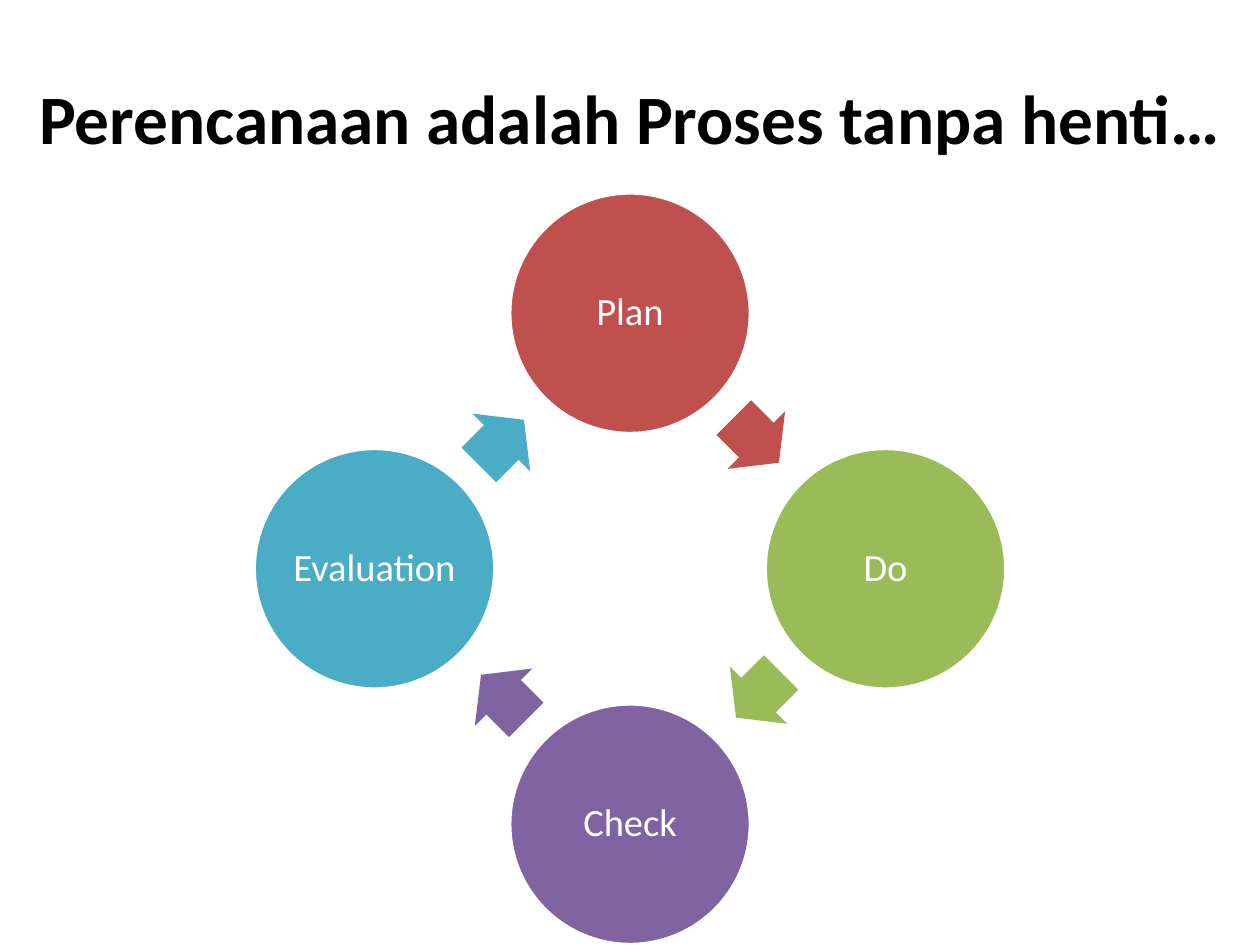
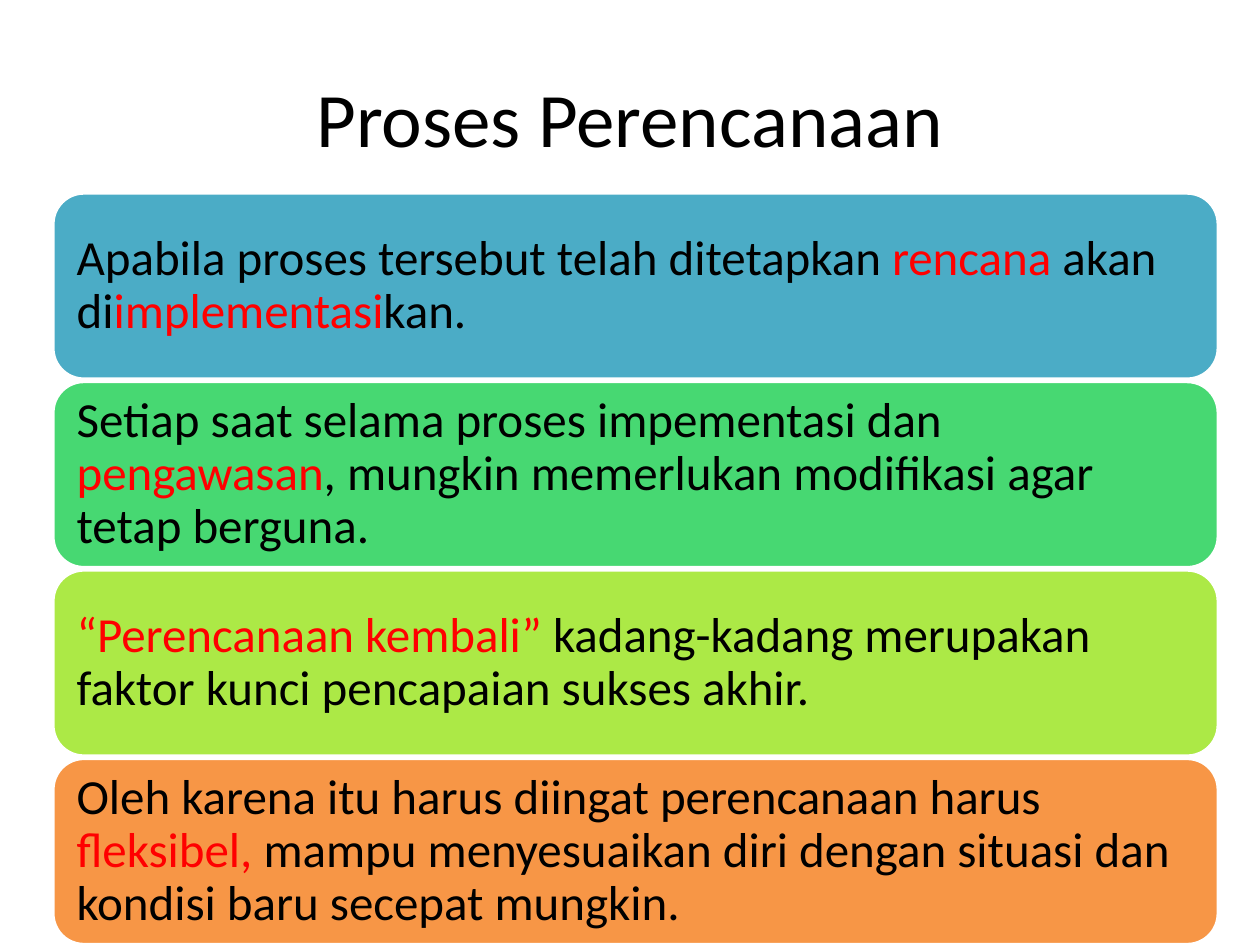
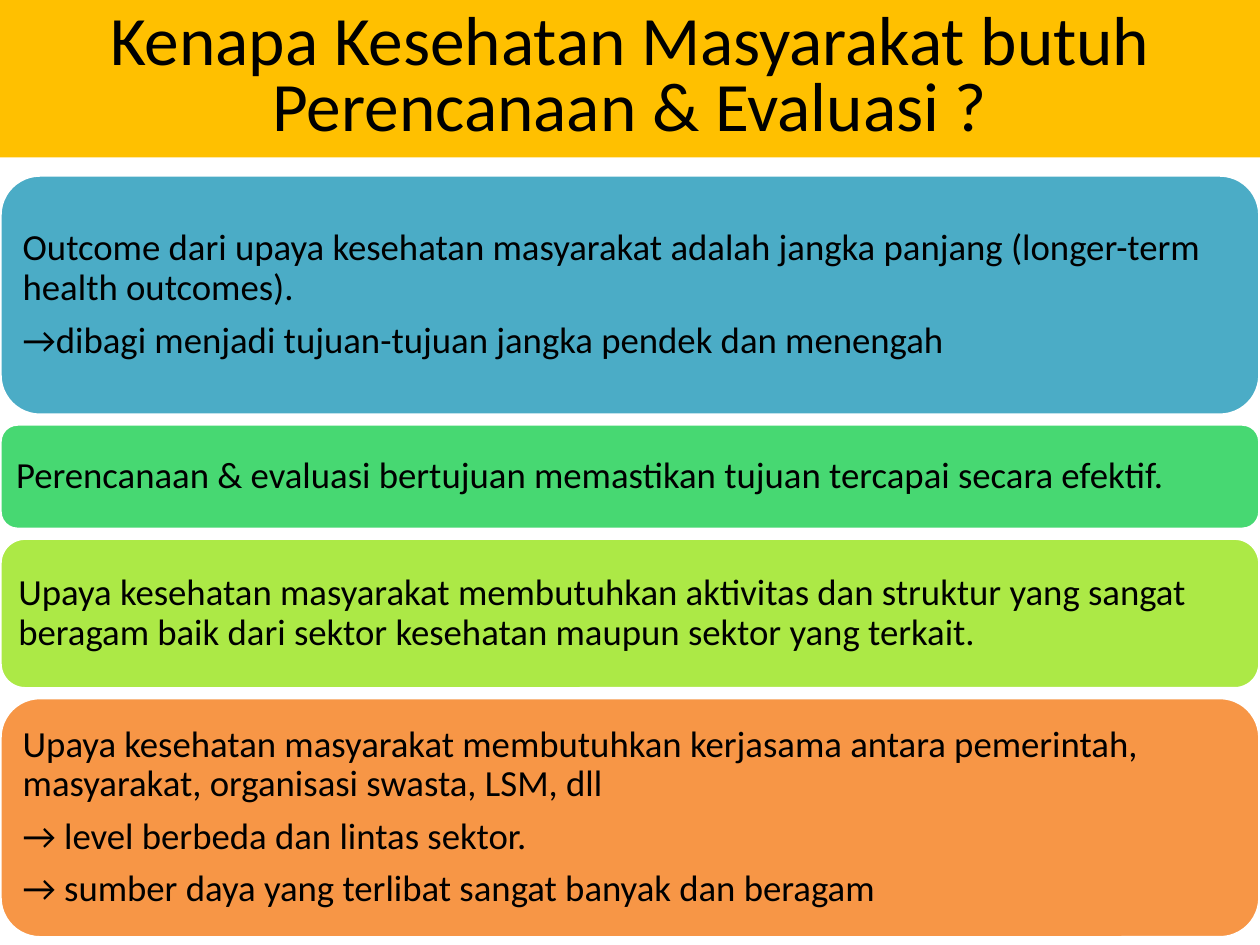
"""Build three slides on planning as a cycle, a process and a need."""
from dataclasses import dataclass
from math import cos, radians, sin

from pptx import Presentation
from pptx.dml.color import RGBColor
from pptx.enum.shapes import MSO_SHAPE
from pptx.enum.text import MSO_ANCHOR, MSO_AUTO_SIZE, PP_ALIGN
from pptx.util import Pt

OVAL = MSO_SHAPE.OVAL
ROUND = MSO_SHAPE.ROUNDED_RECTANGLE
ARROW = MSO_SHAPE.RIGHT_ARROW
MIDDLE = MSO_ANCHOR.MIDDLE
FIXED = MSO_AUTO_SIZE.NONE
LEFT, CENTER = PP_ALIGN.LEFT, PP_ALIGN.CENTER


@dataclass(frozen=True)
class Theme:
    """Hold the colours, font and type sizes of the deck."""
    font: str = "Calibri"
    ink: str = "000000"
    paper: str = "FFFFFF"
    stress: str = "FF0000"
    band: str = "FFC000"
    ring: tuple = ("C0504D", "9BBB59", "8064A2", "4BACC6")
    rows: tuple = ("4BACC6", "47D872", "ACE946", "F79646")
    head: float = 44
    tight: float = 39.6
    node: float = 22
    large: float = 28
    small: float = 21


THEME = Theme()

STEPS = ("Plan", "Do", "Check", "Evaluation")

PROCESS = (
    (106.4, [("Apabila proses tersebut telah ditetapkan ", "rencana",
              " akan di", "implementasi", "kan.")]),
    (106.4, [("Setiap saat selama proses impementasi dan ", "pengawasan",
              ", mungkin memerlukan modifikasi agar tetap berguna.")]),
    (106.4, [("", "“Perencanaan kembali” ",
              "kadang-kadang merupakan faktor kunci pencapaian sukses akhir.")]),
    (106.4, [("Oleh karena itu harus diingat perencanaan harus ", "fleksibel, ",
              "mampu menyesuaikan diri dengan situasi dan kondisi baru "
              "secepat mungkin.")]),
)

REASONS = (
    (137.3, [("Outcome dari upaya kesehatan masyarakat adalah jangka panjang "
              "(longer-term health outcomes).",),
             ("→dibagi menjadi tujuan-tujuan jangka pendek dan menengah",)]),
    (60.2, [("Perencanaan & evaluasi bertujuan memastikan tujuan tercapai "
             "secara efektif.",)]),
    (86.1, [("Upaya kesehatan masyarakat membutuhkan aktivitas dan struktur "
             "yang sangat beragam baik dari sektor kesehatan maupun sektor "
             "yang terkait.",)]),
    (137.3, [("Upaya kesehatan masyarakat membutuhkan kerjasama antara "
              "pemerintah, masyarakat, organisasi swasta, LSM, dll",),
             ("→ level berbeda dan lintas sektor.",),
             ("→ sumber daya yang terlibat sangat banyak dan beragam",)]),
)


def put(item, values):
    """Set each named value on the item."""
    for name, value in values.items():
        setattr(item, name, value)


def paint(fill, color):
    """Give a fill one solid colour."""
    fill.solid()
    fill.fore_color.rgb = RGBColor.from_string(color)


def style(font, size, color, bold=False):
    """Set the face, size, weight and colour of a font."""
    put(font, {"name": THEME.font, "size": Pt(size), "bold": bold})
    font.color.rgb = RGBColor.from_string(color)


def title(deck, text, box, size, bold=False, space=1.0, band=None):
    """Add a slide with a placed title and an optional band behind it."""
    slide = deck.slides.add_slide(deck.slide_layouts[5])
    head = slide.shapes.title
    put(head, dict(zip(("left", "top", "width", "height"), map(Pt, box))))
    put(head.text_frame, {"text": text, "word_wrap": True,
                          "auto_size": FIXED, "vertical_anchor": MIDDLE})
    para = head.text_frame.paragraphs[0]
    put(para, {"alignment": CENTER, "line_spacing": space})
    style(para.runs[0].font, size, THEME.ink, bold)
    if band:
        paint(head.fill, band)
    return slide


def block(slide, kind, box, color, edge=True):
    """Draw a filled shape, edged in the paper colour if asked."""
    shape = slide.shapes.add_shape(kind, *map(Pt, box))
    shape.shadow.inherit = False
    paint(shape.fill, color)
    if edge:
        paint(shape.line.fill, THEME.paper)
        shape.line.width = Pt(2)
    else:
        shape.line.fill.background()
    return shape


def write(shape, paras, size, inset, align, colors):
    """Write paragraphs whose parts take the two colours in turn."""
    frame = shape.text_frame
    put(frame, {"word_wrap": True, "vertical_anchor": MIDDLE})
    put(frame, {f"margin_{side}": Pt(inset)
                for side in ("left", "top", "right", "bottom")})
    for num, parts in enumerate(paras):
        para = frame.add_paragraph() if num else frame.paragraphs[0]
        put(para, {"alignment": align, "line_spacing": 0.9,
                   "space_before": Pt(0.35 * size if num else 0)})
        for turn, text in enumerate(parts):
            if text:
                run = para.add_run()
                run.text = text
                style(run.font, size, colors[turn % 2])


def polar(reach, angle, width, height):
    """Return a box centred at an angle around the cycle."""
    turn = radians(angle)
    return (360 + reach * cos(turn) - width / 2,
            325 + reach * sin(turn) - height / 2, width, height)


def cycle(slide, steps):
    """Draw a ring of circles, each followed by an arrow."""
    for num, (step, color) in enumerate(zip(steps, THEME.ring)):
        angle = 90 * num - 90
        disc = block(slide, OVAL, polar(146, angle, 137.5, 137.5), color)
        write(disc, [(step,)], THEME.node, 0.1 * THEME.node, CENTER,
              (THEME.paper, THEME.stress))
        arrow = block(slide, ARROW, polar(103, angle + 44.5, 36.5, 46.5),
                      color, edge=False)
        arrow.rotation = 90 * num + 45
        arrow.adjustments[0], arrow.adjustments[1] = 0.6, 0.5


def stack(slide, rows, left, top, width, gap, size):
    """Draw rounded text rows from the top down."""
    for (height, paras), color in zip(rows, THEME.rows):
        row = block(slide, ROUND, (left, top, width, height), color)
        write(row, paras, size, 0.3 * size, LEFT, (THEME.ink, THEME.stress))
        top += height + gap


def main():
    """Build and save the deck."""
    deck = Presentation()
    put(deck, {"slide_width": Pt(720), "slide_height": Pt(540)})
    slide = title(deck, "Perencanaan adalah Proses tanpa henti…",
                  (0, 21.6, 720, 90), THEME.tight, bold=True)
    cycle(slide, STEPS)
    slide = title(deck, "Proses Perencanaan", (36, 21.6, 648, 90), THEME.head)
    stack(slide, PROCESS, 30.2, 110.3, 666, 1.3, THEME.large)
    slide = title(deck, "Kenapa Kesehatan Masyarakat butuh "
                  "Perencanaan & Evaluasi ?", (0, 0, 720, 90), THEME.tight,
                  space=0.8, band=THEME.band)
    stack(slide, REASONS, 0, 100, 720, 5, THEME.small)
    deck.save("out.pptx")


if __name__ == "__main__":
    main()
